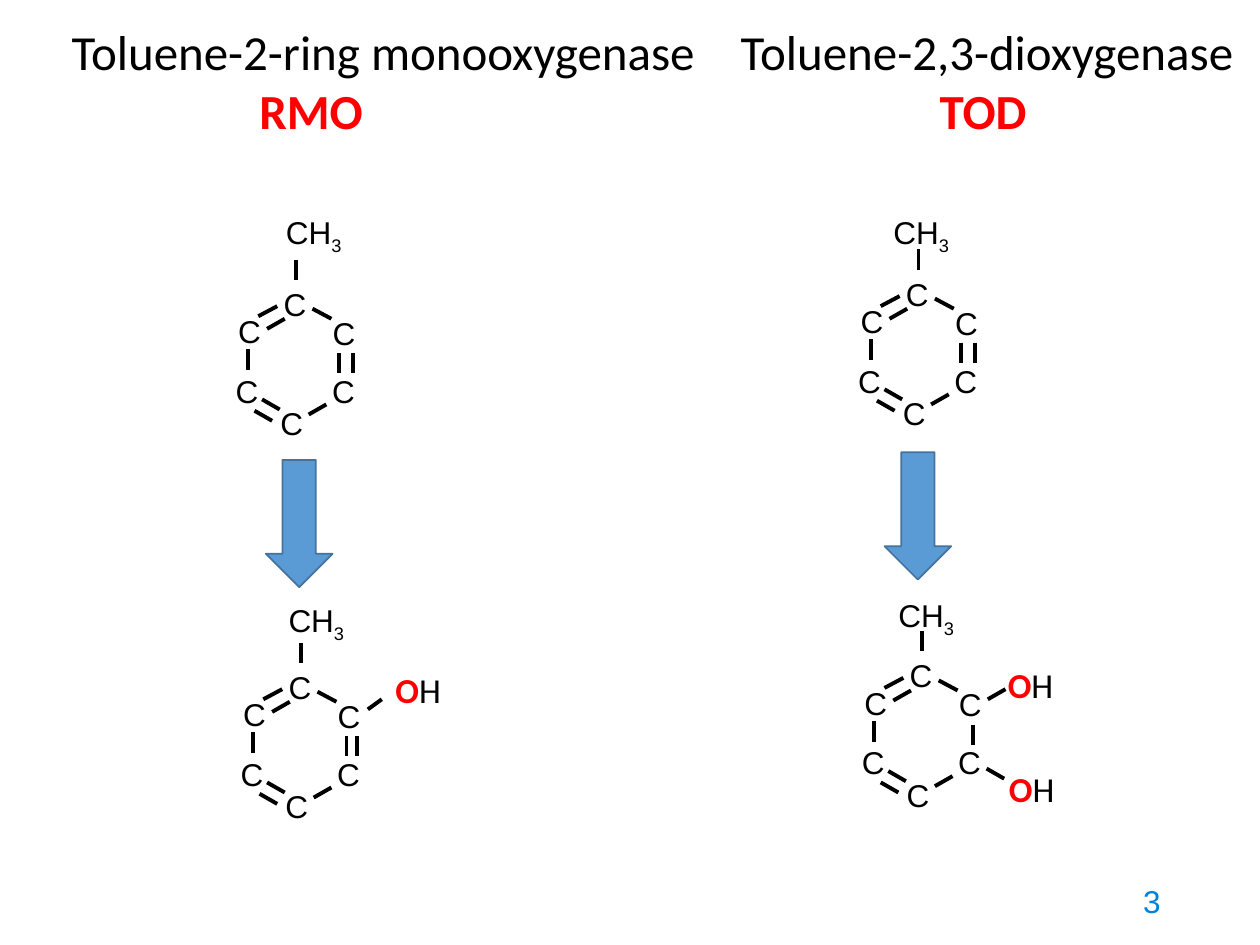
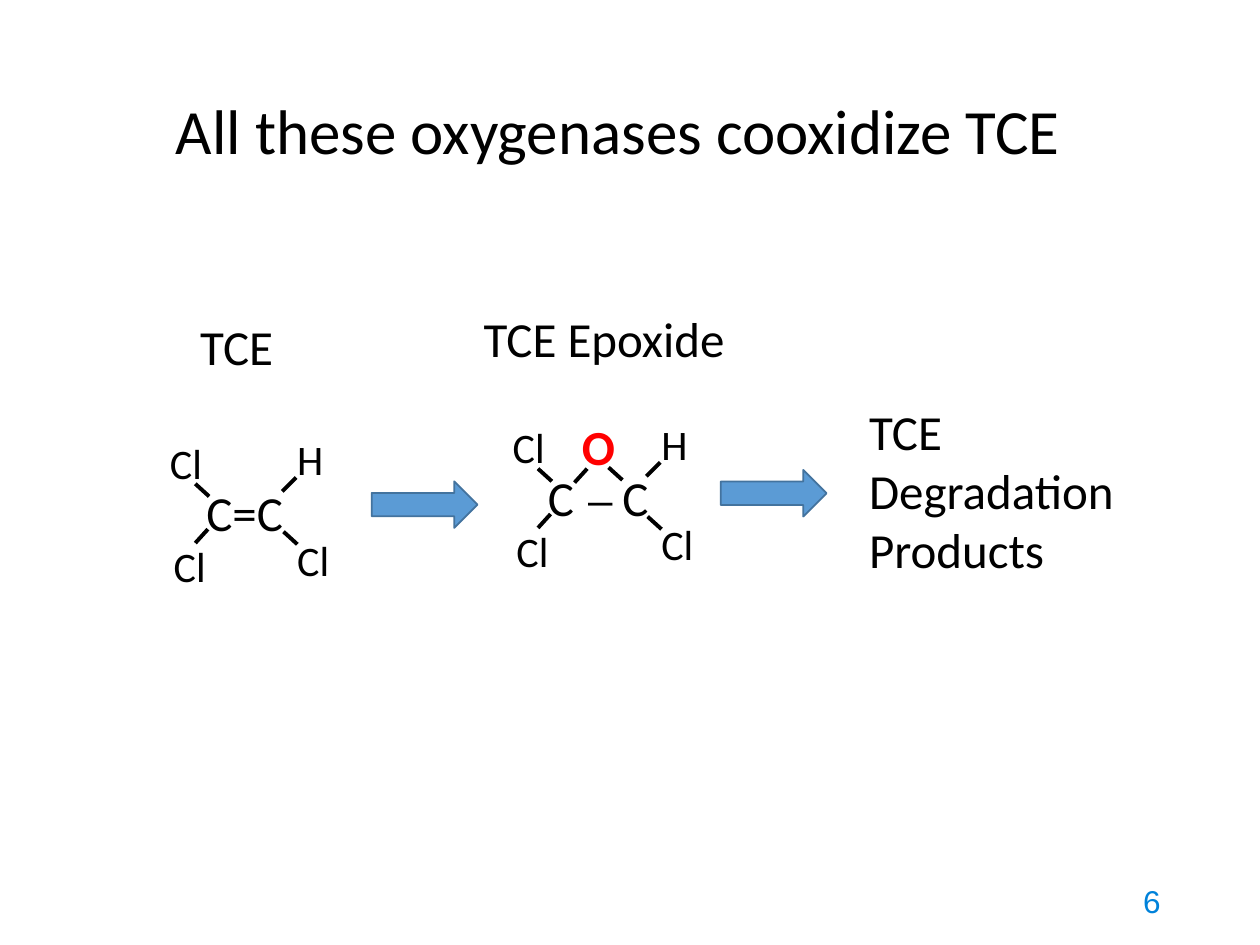
from dataclasses import dataclass

from lxml import etree
from pptx import Presentation
from pptx import util as u
from pptx.dml.color import RGBColor
from pptx.enum import shapes, text
from pptx.oxml import ns


@dataclass(frozen=True)
class Theme:
    ink: str = "000000"
    accent: str = "FF0000"
    arrow_fill: str = "5B9BD5"
    arrow_edge: str = "43739E"
    number: str = "0082DA"
    heading_font: str = "Calibri"
    atom_font: str = "Arial"
    title: int = 36
    label: int = 28
    substituent: int = 24
    hydroxyl: int = 20
    atom: int = 18
    bond_width: float = 2.25


THEME = Theme()
WIDTH, HEIGHT = u.Inches(10), u.Inches(7.5)
COLUMNS, ROWS = 100, 75  # all positions below are in these grid cells


def col(n):
    return round(WIDTH * n / COLUMNS)


def row(n):
    return round(HEIGHT * n / ROWS)


@dataclass(frozen=True)
class Region:
    """A place on the slide; parts are placed relative to its left top corner."""
    slide: object
    left: float = 0
    top: float = 0

    def sub(self, x, y):
        return Region(self.slide, self.left + x, self.top + y)

    def frame(self, x, y, width, height):
        return col(self.left + x), row(self.top + y), col(width), row(height)

    def label(self, box, lines, size, font=THEME.heading_font, color=THEME.ink,
              bold=False, align=None, inset=True, anchor=text.MSO_ANCHOR.TOP):
        """Add paragraphs of plain text and return them."""
        frame = self.slide.shapes.add_textbox(*self.frame(*box)).text_frame
        frame.word_wrap = True
        frame.vertical_anchor = anchor
        if not inset:
            frame.margin_left = frame.margin_right = 0
            frame.margin_top = frame.margin_bottom = 0
        frame.text = "\n".join(lines)
        for paragraph in frame.paragraphs:
            paragraph.alignment = align
            style(paragraph.font, size, font, color, bold)
        return frame.paragraphs

    def bond(self, x1, y1, x2, y2):
        line = self.slide.shapes.add_connector(
            shapes.MSO_CONNECTOR.STRAIGHT, col(self.left + x1), row(self.top + y1),
            col(self.left + x2), row(self.top + y2))
        line.line.color.rgb = RGBColor.from_string(THEME.ink)
        line.line.width = u.Pt(THEME.bond_width)
        etree.SubElement(line._element.spPr, ns.qn("a:effectLst"))

    def arrow(self, kind, box):
        arrow = self.slide.shapes.add_shape(kind, *self.frame(*box))
        arrow.shadow.inherit = False
        arrow.fill.solid()
        arrow.fill.fore_color.rgb = RGBColor.from_string(THEME.arrow_fill)
        arrow.line.color.rgb = RGBColor.from_string(THEME.arrow_edge)
        arrow.line.width = u.Pt(1)


def style(font, size, name, color, bold):
    font.size, font.name, font.bold = u.Pt(size), name, bold
    font.color.rgb = RGBColor.from_string(color)


def page_number(page, number):
    page.label((70.6, 69.5, 22.5, 4), [number], THEME.atom, THEME.atom_font,
               THEME.number, align=text.PP_ALIGN.RIGHT, anchor=text.MSO_ANCHOR.MIDDLE)


# Aromatic ring, measured from the box of its top carbon
CARBONS = [(0, 0), (-3.6, 2.2), (-3.8, 6.9), (3.9, 2.3), (3.85, 6.9), (-0.25, 9.5)]
RING_BONDS = [
    (1, -2, 1, -0.4),         # to the methyl group
    (-2.8, 5.1, -2.8, 6.8),   # left side
    (-0.5, 1.7, -2, 2.5), (0.1, 2.7, -1.3, 3.5),      # upper left, double
    (-1.7, 9.1, -0.3, 9.9), (-2.3, 10, -0.9, 10.8),   # lower left, double
    (2.3, 1.9, 3.8, 2.7),     # upper right
    (3.4, 9.5, 2, 10.3),      # lower right
]


def ring(region, methyl, right_bonds):
    """Toluene ring; right_bonds holds the x of each line on the right side."""
    for x, y in CARBONS:
        region.label((x, y, 2.5, 3), ["C"], THEME.atom, THEME.atom_font, inset=False)
    for ends in RING_BONDS:
        region.bond(*ends)
    for x in right_bonds:
        region.bond(x, 5.4, x, 7)
    group, = region.label((*methyl, 6.3, 3), ["CH"], THEME.atom, THEME.atom_font,
                          inset=False)
    subscript = group.add_run()
    subscript.text = "3"
    subscript.font._element.set("baseline", "-25000")


def hydroxyl(region, place, bond):
    region.bond(*bond)
    group, = region.label((*place, 6, 4.4), ["O"], THEME.hydroxyl)
    oxygen = group.runs[0]
    oxygen.font.bold = True
    oxygen.font.color.rgb = RGBColor.from_string(THEME.accent)
    group.add_run().text = "H"


def enzyme_heading(region, name, short, width, indent):
    _, abbreviation = region.label((0, 0, width, 10.4), [name, short], THEME.label)
    abbreviation.font.bold = True
    abbreviation.font.color.rgb = RGBColor.from_string(THEME.accent)
    abbreviation._p.get_or_add_pPr().set("marL", str(col(indent)))


def ring_oxidation_slide(slide):
    page = Region(slide)
    down = shapes.MSO_SHAPE.DOWN_ARROW

    # Monooxygenase adds one hydroxyl group
    enzyme_heading(page.sub(4.7, 1.2), "Toluene-2-ring monooxygenase", "RMO", 53, 14.9)
    ring(page.sub(22.5, 22.6), (0.2, -5.7), (4.4, 5.5))
    page.arrow(down, (21.1, 36.5, 5.3, 10.1))
    cresol = page.sub(22.9, 53)
    ring(cresol, (0, -5.3), (4.6, 5.4))
    hydroxyl(cresol, (7.5, -0.4), (6.3, 3.3, 7.4, 2.5))

    # Dioxygenase adds two
    enzyme_heading(page.sub(57.8, 1.2), "Toluene-2,3-dioxygenase", "TOD", 42.2, 15.8)
    ring(page.sub(71.9, 21.8), (-1, -4.9), (4.4, 5.5))
    page.arrow(down, (70.2, 35.9, 5.3, 10.1))
    catechol = page.sub(72.2, 52.1)
    ring(catechol, (-0.9, -4.8), (5,))
    hydroxyl(catechol, (6.8, 0.1), (7.6, 2.6, 6.2, 3.4))
    hydroxyl(catechol, (6.9, 8.3), (6.1, 8.9, 7.5, 9.7))

    page_number(page, "3")


def substituents(region, right):
    """Three chlorines and a hydrogen; right is where the right pair starts."""
    for symbol, x, y in [("Cl", 0, 0.3), ("Cl", 0.3, 8.5),
                         ("H", right, 0), ("Cl", right, 8)]:
        region.label((x, y, 5.8, 5), [symbol], THEME.substituent)
    region.bond(3, 4.5, 4.1, 5.5)
    region.bond(3, 9.2, 4, 8.1)
    region.bond(right - 0.2, 5.1, right + 0.9, 4)
    region.bond(right - 0.1, 8.3, right + 1, 9.3)


def epoxide_core(region):
    for symbol, x, y in [("C", 2.8, 3.9), ("C", 8.7, 3.9), ("_", 6, 2.6)]:
        region.label((x, y, 4.2, 5.7), [symbol], THEME.label)
    region.label((5.5, -0.1, 9.6, 5.7), ["O"], THEME.label, color=THEME.accent, bold=True)
    region.bond(8.6, 4.4, 9.7, 5.4)
    region.bond(5.9, 5.6, 6.9, 4.5)


def cooxidation_slide(slide):
    page = Region(slide)
    page.label((11.2, 6.8, 75.7, 7.1), ["All these oxygenases cooxidize TCE"],
               THEME.title, align=text.PP_ALIGN.CENTER)

    # Compound names
    for name, box in [("TCE", (14.9, 24.6, 20.5, 5.7)),
                      ("TCE Epoxide", (37.4, 24, 24.7, 5.7)),
                      ("TCE Degradation Products", (68, 31.4, 24.7, 15.1))]:
        page.label(box, [name], THEME.label)

    # Structures
    tce = page.sub(12.5, 33.9)
    substituents(tce, 10.1)
    tce.label((2.9, 3.9, 9.9, 5.7), ["C=C"], THEME.label)
    epoxide = page.sub(39.7, 32.7)
    substituents(epoxide, 11.8)
    epoxide_core(epoxide)

    # Reaction steps
    for x, y in [(29.5, 38.2), (57.2, 37.3)]:
        page.arrow(shapes.MSO_SHAPE.RIGHT_ARROW, (x, y, 8.4, 3.7))

    page_number(page, "6")


def main():
    deck = Presentation()
    deck.slide_width, deck.slide_height = WIDTH, HEIGHT
    blank = deck.slide_layouts[6]
    for build in (ring_oxidation_slide, cooxidation_slide):
        build(deck.slides.add_slide(blank))
    deck.save("out.pptx")


if __name__ == "__main__":
    main()
